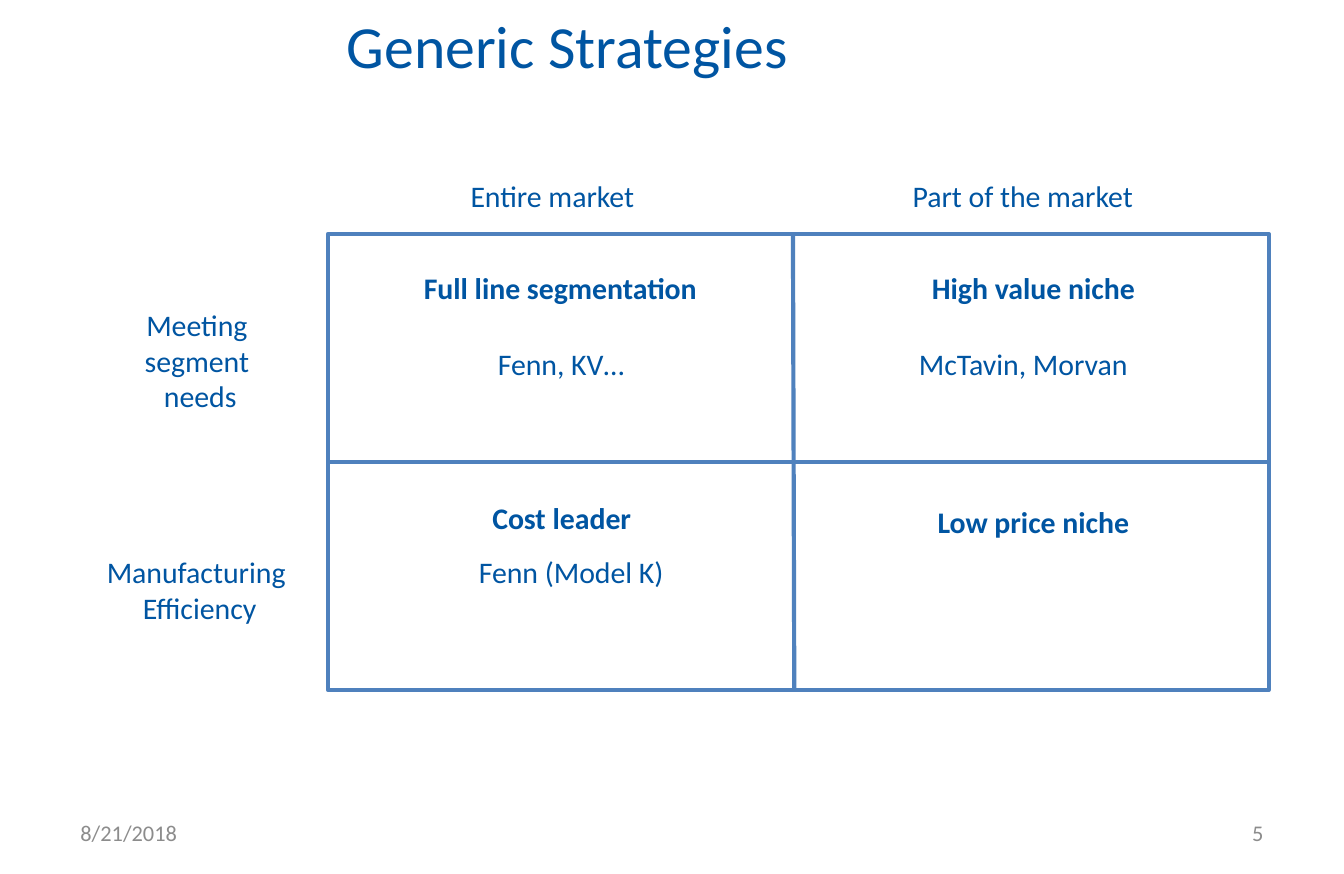
from dataclasses import dataclass

from lxml import etree
from pptx import Presentation
from pptx.dml.color import RGBColor
from pptx.enum.shapes import MSO_CONNECTOR, MSO_SHAPE
from pptx.enum.text import MSO_ANCHOR, MSO_AUTO_SIZE, PP_ALIGN
from pptx.oxml.ns import qn
from pptx.util import Inches, Pt

LEFT, CENTER, RIGHT = PP_ALIGN.LEFT, PP_ALIGN.CENTER, PP_ALIGN.RIGHT
TOP, MIDDLE = MSO_ANCHOR.TOP, MSO_ANCHOR.MIDDLE
FIT_SHAPE = MSO_AUTO_SIZE.SHAPE_TO_FIT_TEXT
STRAIGHT = MSO_CONNECTOR.STRAIGHT
ROUNDED = MSO_SHAPE.ROUNDED_RECTANGLE


@dataclass(frozen=True)
class Theme:
    font: str = "Calibri"
    ink: RGBColor = RGBColor(0x00, 0x55, 0xA2)
    muted: RGBColor = RGBColor(0x8C, 0x8C, 0x8C)
    rule: RGBColor = RGBColor(0x4F, 0x81, 0xBD)
    title_size: Pt = Pt(32)
    label_size: Pt = Pt(16)
    footer_size: Pt = Pt(12)
    rule_width: Pt = Pt(2.25)


theme = Theme()


def write(frame, lines, size, color, align, anchor=MIDDLE, bold=False):
    frame.vertical_anchor = anchor
    for index, line in enumerate(lines):
        paragraph = frame.add_paragraph() if index else frame.paragraphs[0]
        paragraph.alignment = align
        run = paragraph.add_run()
        run.text = line
        run.font.name = theme.font
        run.font.size = size
        run.font.bold = bold
        run.font.color.rgb = color


def add_clear_box(parent, left, top, width, height):
    box = parent.add_shape(ROUNDED, Inches(left), Inches(top), Inches(width), Inches(height))
    box.adjustments[0] = 0
    box.shadow.inherit = False
    box.fill.background()
    box.line.fill.background()
    return box


prs = Presentation()
prs.slide_width, prs.slide_height = Inches(10), Inches(6.5)
slide = prs.slides.add_slide(prs.slide_layouts[5])
shapes = slide.shapes

title = shapes.title
title.left, title.top = Inches(2.48), Inches(0)
title.width, title.height = Inches(7.52), Inches(0.66)
write(title.text_frame, ["Generic Strategies"], theme.title_size, theme.ink, LEFT)

for left, footer, align in [(0.5, "8/21/2018", LEFT), (7.17, "5", RIGHT)]:
    box = shapes.add_textbox(Inches(left), Inches(6.02), Inches(2.33), Inches(0.35))
    box.text_frame.word_wrap = True
    write(box.text_frame, [footer], theme.footer_size, theme.muted, align)

grid = shapes.add_group_shape().shapes
matrix = add_clear_box(grid, 2.44, 1.74, 7, 3.39)
row_divider = grid.add_connector(STRAIGHT, Inches(2.44), Inches(3.43), Inches(9.44), Inches(3.43))
row_divider.begin_connect(matrix, 1)
row_divider.end_connect(matrix, 3)
column_divider = grid.add_connector(STRAIGHT, Inches(5.9), Inches(1.74), Inches(5.91), Inches(5.12))
for outline in (matrix, row_divider, column_divider):
    outline.line.color.rgb = theme.rule
    outline.line.width = theme.rule_width
for divider in (row_divider, column_divider):
    etree.SubElement(divider.element.spPr, qn("a:effectLst"))

labels = [
    (3.27, 1.27, 1.68, ["Entire market"], False),
    (6.52, 1.27, 2.18, ["Part of the market"], False),
    (2.86, 1.96, 2.62, ["Full line segmentation"], True),
    (6.66, 1.96, 2.06, ["High value niche"], True),
    (3.46, 3.67, 1.44, ["Cost leader"], True),
    (6.71, 3.7, 1.96, ["Low price niche"], True),
    (0.88, 2.23, 1.22, ["Meeting ", "segment ", "needs"], False),
    (0.54, 4.07, 1.89, ["Manufacturing ", "Efficiency"], False),
    (3.51, 2.52, 1.33, ["Fenn, KV…"], False),
    (6.51, 2.52, 2.21, ["McTavin, Morvan"], False),
    (3.39, 4.07, 1.72, ["Fenn (Model K)"], False),
]
for left, top, width, lines, bold in labels:
    label = add_clear_box(shapes, left, top, width, 0.1 + 0.27 * len(lines))
    label.text_frame.word_wrap = False
    label.text_frame.auto_size = FIT_SHAPE
    write(label.text_frame, lines, theme.label_size, theme.ink, CENTER, TOP, bold)

prs.save("out.pptx")
